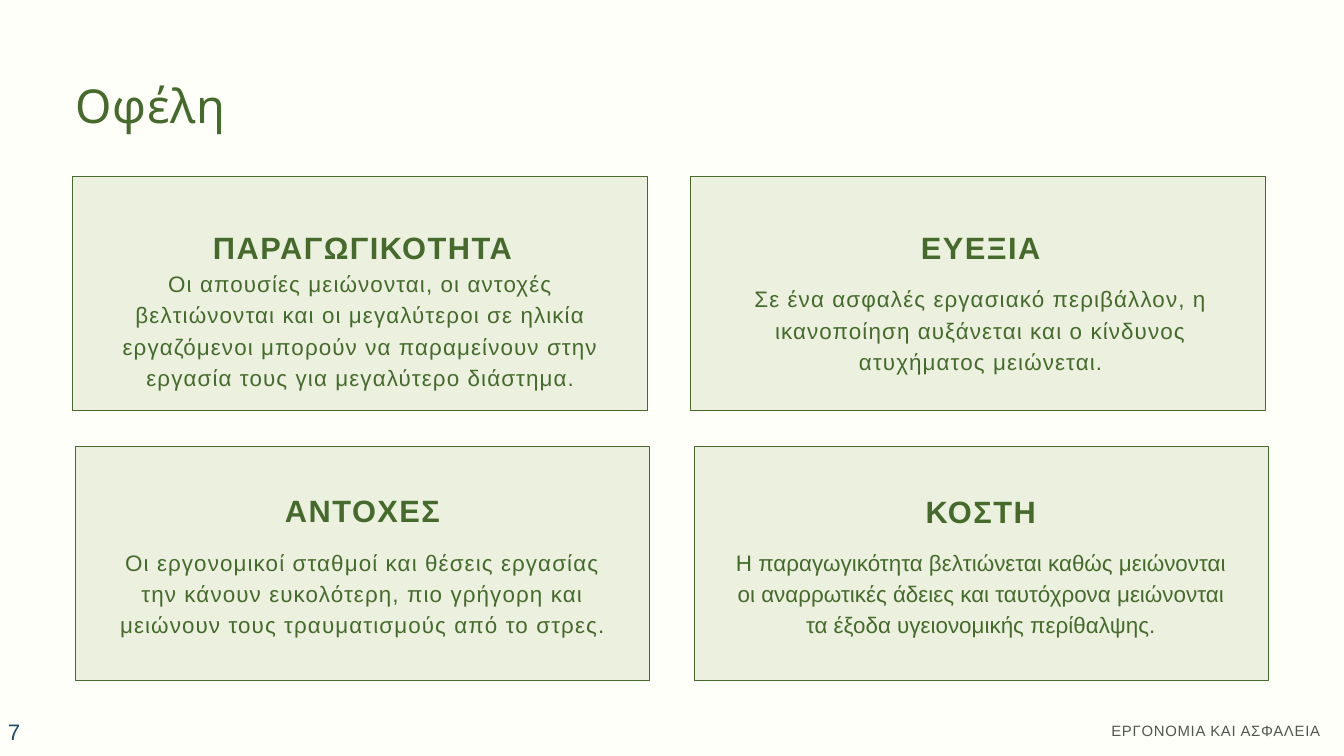
"""Build the slide on the four benefits of ergonomics at work."""
from pptx import Presentation
from pptx.dml.color import RGBColor
from pptx.enum.shapes import MSO_SHAPE as Shape
from pptx.enum.text import MSO_ANCHOR as Anchor, MSO_AUTO_SIZE as Fit, PP_ALIGN as Align
from pptx.util import Inches, Pt

COLORS = {"paper": "FEFFF8", "green": "456A2C", "pale": "EBF1DE",
          "grey": "52584D", "blue": "1E4D65"}


def color(name):
    return RGBColor.from_string(COLORS[name])


def write(box, text, size, ink="green", face="Arial", bold=False, align=Align.CENTER,
          lead=None, track=0, inset=0, anchor=Anchor.TOP):
    frame = box.text_frame
    frame.word_wrap = True
    frame.auto_size = Fit.NONE
    frame.vertical_anchor = anchor
    frame.margin_left = frame.margin_right = Inches(inset)
    frame.margin_top = frame.margin_bottom = Inches(inset / 2)
    frame.text = text
    par = frame.paragraphs[0]
    par.alignment = align
    if lead:
        par.line_spacing = Pt(lead)
    font = par.font
    font.name, font.size, font.bold = face, Pt(size), bold
    font.color.rgb = color(ink)
    if track:
        par.runs[0]._r.get_or_add_rPr().set("spc", str(round(track * 100)))


deck = Presentation()
deck.slide_width, deck.slide_height = Inches(20), Inches(11.25)
slide = deck.slides.add_slide(deck.slide_layouts[5])
slide.background.fill.solid()
slide.background.fill.fore_color.rgb = color("paper")
shapes = slide.shapes

title = shapes.title
title.left, title.top = Inches(1.12), Inches(1.05)
title.width, title.height = Inches(17.71), Inches(0.94)
write(title, "Οφέλη", 50, face="League Spartan", align=Align.LEFT, lead=66.8, track=1)

cards = [
    (1.08, 2.62, 1.7, 3.38, 1.67, 3.95, 1.2, "ΠΑΡΑΓΩΓΙΚΟΤΗΤΑ",
     "Οι απουσίες μειώνονται, οι αντοχές βελτιώνονται και οι μεγαλύτεροι σε ηλικία "
     "εργαζόμενοι μπορούν να παραμείνουν στην εργασία τους για μεγαλύτερο διάστημα."),
    (10.28, 2.62, 10.9, 3.38, 10.9, 4.18, 1.2, "ΕΥΕΞΙΑ",
     "Σε ένα ασφαλές εργασιακό περιβάλλον, η ικανοποίηση αυξάνεται και ο κίνδυνος "
     "ατυχήματος μειώνεται."),
    (1.12, 6.64, 1.7, 7.3, 1.7, 8.1, 1.2, "ΑΝΤΟΧΕΣ",
     "Οι εργονομικοί σταθμοί και θέσεις εργασίας την κάνουν ευκολότερη, πιο γρήγορη "
     "και μειώνουν τους τραυματισμούς από το στρες."),
    (10.33, 6.64, 10.9, 7.31, 10.9, 8.1, 0, "ΚΟΣΤΗ",
     "Η παραγωγικότητα βελτιώνεται καθώς μειώνονται οι αναρρωτικές άδειες και "
     "ταυτόχρονα μειώνονται τα έξοδα υγειονομικής περίθαλψης."),
]
for left, top, head_x, head_y, body_x, body_y, track, head, body in cards:
    card = shapes.add_shape(Shape.RECTANGLE, Inches(left), Inches(top),
                            Inches(8.55), Inches(3.48))
    card.shadow.inherit = False
    card.fill.solid()
    card.fill.fore_color.rgb = color("pale")
    card.line.color.rgb = color("green")
    card.line.width = Pt(0.75)
    box = shapes.add_textbox(Inches(head_x), Inches(head_y), Inches(7.39), Inches(0.58))
    write(box, head, 33, bold=True, lead=41.2, track=1.6)
    tall = 1.91 if body_y < 4 else 1.43
    box = shapes.add_textbox(Inches(body_x), Inches(body_y), Inches(7.39), Inches(tall))
    write(box, body, 24, lead=33.6, track=track)

foot = shapes.add_textbox(Inches(11.33), Inches(10.7), Inches(8.32), Inches(0.31))
write(foot, "ΕΡΓΟΝΟΜΙΑ ΚΑΙ ΑΣΦΑΛΕΙΑ", 16, "grey", align=Align.RIGHT, lead=22.4, track=0.8)
page = shapes.add_textbox(Inches(0.02), Inches(10.69), Inches(2.33), Inches(0.4))
write(page, "7", 24, "blue", align=Align.LEFT, track=1.2, inset=0.1, anchor=Anchor.MIDDLE)

deck.save("out.pptx")
